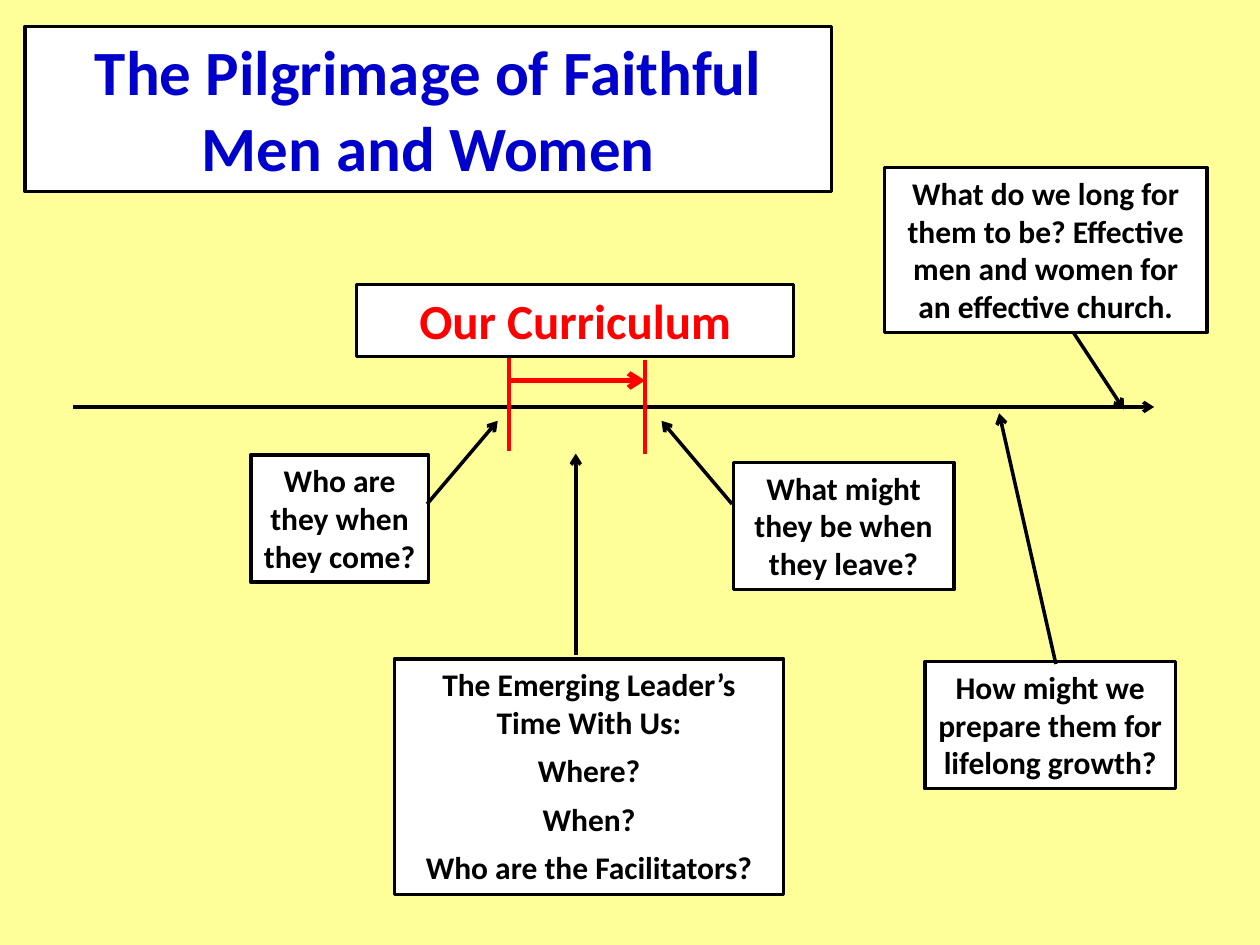
import pptx
import pptx.util
import pptx.dml.color
import pptx.enum.shapes
import pptx.enum.text
import pptx.oxml

Inches, Pt = pptx.util.Inches, pptx.util.Pt
BLACK, RED, BLUE, WHITE, CREAM = "000000", "FF0000", "0000CC", "FFFFFF", "FFFF99"

# Content: boxes as (paragraphs, (left, top, width, height), size, colour, space after)
title = (["The Pilgrimage of Faithful Men and Women"], (0.2, 0.21, 6.4, 1.31), 36, BLUE, 10)
boxes = [
    (["The Emerging Leader’s Time With Us:", "Where?", "When?", "Who are the Facilitators?"],
     (3.13, 5.23, 3.09, 1.87), 18, BLACK, 6),
    (["Who are they when they come?"], (1.99, 3.61, 1.41, 1.01), 18, BLACK, 10),
    (["What might they be when they leave?"], (5.82, 3.67, 1.75, 1.01), 18, BLACK, 10),
    (["How might we prepare them for lifelong growth?"], (7.34, 5.25, 1.99, 1.01), 18, BLACK, 10),
    (["What do we long for them to be? Effective men and women for an effective church."],
     (7.02, 1.33, 2.56, 1.31), 18, BLACK, 10),
    (["Our Curriculum"], (2.83, 2.26, 3.47, 0.57), 28, RED, 10),
]

# Timeline: the curriculum spans entry to exit along the axis
axis_y, entry_x, exit_x, span_y = 3.23, 4.04, 5.12, 3.02
# Lines as (start, end, colour, width, arrowhead at end)
lines = [
    ((0.58, axis_y), (9.16, axis_y), BLACK, 2, True),
    ((entry_x, 2.84), (entry_x, 3.58), RED, 2, False),
    ((exit_x, 2.86), (exit_x, 3.6), RED, 2, False),
    ((entry_x, span_y), (exit_x, span_y), RED, 3, True),
    ((4.57, 5.2), (4.57, 3.6), BLACK, 2, True),
    ((3.39, 4), (3.95, 3.34), BLACK, 2, True),
    ((5.81, 4), (5.25, 3.34), BLACK, 2, True),
    ((8.38, 5.27), (7.93, 3.28), BLACK, 2, True),
    ((8.52, 2.64), (8.92, 3.25), BLACK, 2, True),
]


def rgb(colour):
    return pptx.dml.color.RGBColor.from_string(colour)


def fill_box(box, paragraphs, place, size, colour, space_after):
    box.left, box.top, box.width, box.height = map(Inches, place)
    box.fill.solid()
    box.fill.fore_color.rgb = rgb(WHITE)
    box.line.color.rgb = rgb(BLACK)
    box.line.width = Pt(2)
    frame = box.text_frame
    frame.text = "\n".join(paragraphs)
    frame.word_wrap = True
    frame.auto_size = pptx.enum.text.MSO_AUTO_SIZE.NONE
    frame.vertical_anchor = pptx.enum.text.MSO_ANCHOR.TOP
    for paragraph in frame.paragraphs:
        paragraph.alignment = pptx.enum.text.PP_ALIGN.CENTER
        paragraph.line_spacing = 1.0
        paragraph.space_before = Pt(0)
        paragraph.space_after = Pt(space_after)
        for run in paragraph.runs:
            run.font.name = "Calibri"
            run.font.size = Pt(size)
            run.font.bold = True
            run.font.color.rgb = rgb(colour)


def add_line(slide, start, end, colour, width, arrow):
    line = slide.shapes.add_connector(
        pptx.enum.shapes.MSO_CONNECTOR.STRAIGHT, *map(Inches, start + end))
    line.line.color.rgb = rgb(colour)
    line.line.width = Pt(width)
    if arrow:
        line.line._get_or_add_ln().append(pptx.oxml.parse_xml(
            '<a:tailEnd xmlns:a="http://schemas.openxmlformats.org/drawingml/2006/main" type="arrow"/>'))
    line._element.spPr.append(pptx.oxml.parse_xml(
        '<a:effectLst xmlns:a="http://schemas.openxmlformats.org/drawingml/2006/main"/>'))


def main():
    deck = pptx.Presentation()
    deck.slide_width, deck.slide_height = Inches(10), Inches(7.5)
    slide = deck.slides.add_slide(deck.slide_layouts[5])
    slide.background.fill.solid()
    slide.background.fill.fore_color.rgb = rgb(CREAM)

    # Title, question boxes, then the timeline and its arrows
    fill_box(slide.shapes.title, *title)
    for content in boxes:
        box = slide.shapes.add_shape(pptx.enum.shapes.MSO_SHAPE.RECTANGLE, 0, 0, 0, 0)
        box.shadow.inherit = False
        fill_box(box, *content)
    for line in lines:
        add_line(slide, *line)
    deck.save("out.pptx")


if __name__ == "__main__":
    main()
